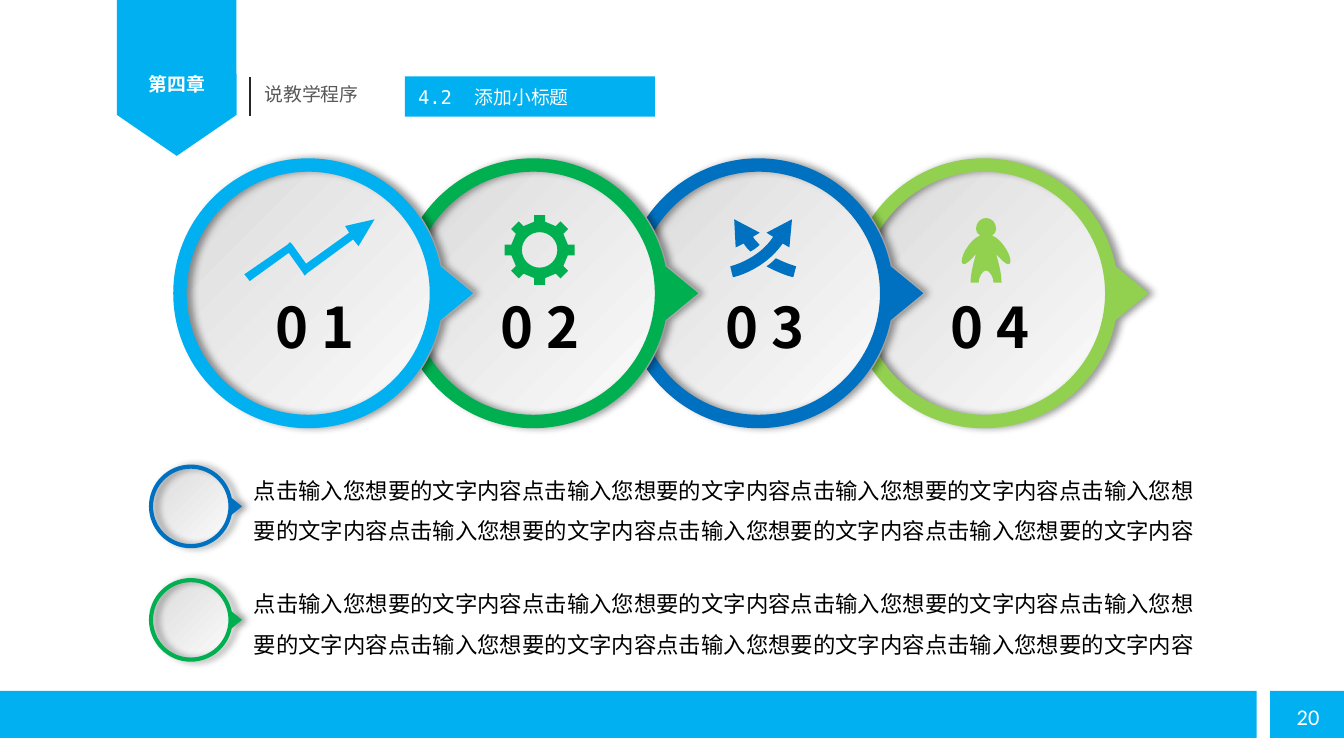
from dataclasses import dataclass
from itertools import pairwise
from math import cos, radians, sin, tan

from lxml import etree
from pptx import Presentation
from pptx import util as u
from pptx.dml.color import RGBColor
from pptx.enum import shapes, text
from pptx.oxml import ns

Step = tuple[float, ...]
Contour = list[Step]

COLORS = {
    "sky": "00B0F0", "green": "00B050", "blue": "0070C0", "lime": "92D050",
    "white": "FFFFFF", "black": "000000", "gray": "595959", "rule": "262626",
    "silver": "D9D9DA",
}
SANS, LATIN, MONO = "Noto Sans CJK SC", "Calibri", "DejaVu Sans Mono"
SENTENCE = "点击输入您想要的文字内容"
RADIUS, HOLE, TIP, BASE_ANGLE = 72.3, 65.1, 88.4, 11.5


@dataclass
class Bubble:
    x: float
    y: float
    color: str
    scale: float = 1
    number: str = ""
    icon: tuple[Contour, ...] = ()


@dataclass
class Band:
    left: float
    top: float
    width: float
    height: float
    kind: shapes.MSO_SHAPE = shapes.MSO_SHAPE.RECTANGLE
    rotation: float = 0


def rgb(color: str) -> RGBColor:
    return RGBColor.from_string(COLORS[color])


def pairs(step: Step) -> list[Step]:
    return list(zip(step[::2], step[1::2]))


def shift(contour: Contour, x: float, y: float) -> Contour:
    return [sum(((px + x, py + y) for px, py in pairs(step)), ()) for step in contour]


def arc(radius: float, start: float = 0, end: float = 360) -> Contour:
    stops = [radians(a) for a in (start, 90, 180, 270, end)]
    contour: Contour = [(radius * cos(stops[0]), radius * sin(stops[0]))]
    for a, b in pairwise(stops):
        pull = 4 / 3 * tan((b - a) / 4)
        contour.append((radius * (cos(a) - pull * sin(a)), radius * (sin(a) + pull * cos(a)),
                        radius * (cos(b) + pull * sin(b)), radius * (sin(b) - pull * cos(b)),
                        radius * cos(b), radius * sin(b)))
    return contour


def mirrored_back(contour: Contour) -> Contour:
    back: Contour = []
    for before, step in reversed(list(pairwise(contour))):
        stops = pairs(step)[-2::-1] + [before[-2:]]
        back.append(sum(((-px, py) for px, py in stops), ()))
    return back


def gear(x: float, y: float) -> tuple[Contour, ...]:
    tooth = [(15.1, -2.9), (18.7, -2.9), (18.7, 2.9), (15.1, 2.9)]
    turns = [radians(45 * i) for i in range(8)]
    rim = [(px * cos(a) - py * sin(a), px * sin(a) + py * cos(a))
           for a in turns for px, py in tooth]
    return shift(rim, x, y), shift(arc(9.5), x, y)


def person(x: float, y: float) -> tuple[Contour, ...]:
    half = [(0, 0), (3, 0, 5.4, 2.5, 5.4, 5.8), (5.4, 7.2, 4.7, 8.6, 3.2, 9.4),
            (9, 11.5, 14.8, 22.3, 12.6, 24.5), (11.2, 25.9, 8.3, 22.3, 5.4, 19.4),
            (6.8, 24.5, 8.3, 29.5, 8.3, 34.6), (4, 34.6), (4, 31.7, 1.8, 28.1, 0, 28.1)]
    return (shift(half + mirrored_back(half), x, y),)


TREND = ([(35.6, -39.6), (19.8, -36), (22, -32.4), (-1.1, -15.8), (-8.3, -25.9),
          (-9.7, -27.4), (-11.2, -25.9), (-34.2, -10.1), (-31.3, -6.5), (-10.4, -21.6),
          (-3.2, -11.5), (-1.8, -9.4), (-0.4, -10.8), (24.1, -28.8), (27, -25.2)],)
CROSSING = (
    [(-7.9, -26.6), (-7.2, -25.2, -5.8, -23.8, -4.3, -22.3),
     (-2.9, -23, -0.7, -24.5, 0.7, -25.9), (-0.7, -27.4, -2.2, -28.8, -2.9, -30.2),
     (0.7, -32.4), (-13, -39.6), (-12.2, -24.5)],
    [(13, -26.6), (16.6, -24.5), (18, -39.6), (4.3, -32.4), (7.9, -30.2),
     (0, -18, -15.1, -14.4, -15.1, -14.4), (-13.7, -8.6), (-13, -8.6, 2.9, -12.2, 13, -26.6)],
    [(9.4, -18.7), (7.9, -17.3, 6.5, -15.8, 4.3, -14.4), (12.2, -10.1, 18, -8.6, 18.7, -8.6),
     (20.2, -14.4), (20.2, -14.4, 15.1, -15.8, 9.4, -18.7)],
)


def bend(outline, contours: tuple[Contour, ...]) -> None:
    route = outline._element.find(".//" + ns.qn("a:path"))
    segments = iter(route.findall(ns.qn("a:lnTo")))
    for contour in contours:
        for step in contour[1:]:
            curve, *rest = [next(segments) for _ in pairs(step)]
            if rest:
                curve.tag = ns.qn("a:cubicBezTo")
            for segment in rest:
                curve.append(segment[0])
                route.remove(segment)


def draw_outline(slide, bubble: Bubble, contours: tuple[Contour, ...]):
    placed = [[(u.Pt(bubble.x + px * bubble.scale), u.Pt(bubble.y + py * bubble.scale))
               for step in contour for px, py in pairs(step)] for contour in contours]
    builder = slide.shapes.build_freeform(*placed[0][0], scale=1)
    for i, points in enumerate(placed):
        if i:
            builder.move_to(*points[0])
        builder.add_line_segments(points[1:], close=False)
    outline = builder.convert_to_shape()
    bend(outline, contours)
    outline.shadow.inherit = False
    outline.fill.solid()
    outline.fill.fore_color.rgb = rgb(bubble.color)
    outline.line.fill.background()
    return outline


def cast_shadow(ring) -> None:
    effects = ring._element.spPr.find(ns.qn("a:effectLst"))
    shade = etree.SubElement(effects, ns.qn("a:outerShdw"), blurRad=str(u.Pt(4)),
                             dist=str(u.Pt(3)), dir="0", algn="ctr", rotWithShape="0")
    tint = etree.SubElement(shade, ns.qn("a:srgbClr"), val=COLORS["black"])
    etree.SubElement(tint, ns.qn("a:alpha"), val="40000")


def write(frame, *runs: tuple[str, str], size: float, color: str, bold: bool = False,
          wrap: bool = True, spacing: float | None = None, align=None,
          inset: float | None = None, grow: bool = True) -> None:
    frame.word_wrap = wrap
    if grow:
        frame.auto_size = text.MSO_AUTO_SIZE.SHAPE_TO_FIT_TEXT
    if inset is not None:
        frame.margin_left = frame.margin_right = u.Pt(inset)
        frame.margin_top = frame.margin_bottom = u.Pt(inset)
    paragraph = frame.paragraphs[0]
    paragraph.alignment, paragraph.line_spacing = align, spacing
    for words, font in runs:
        run = paragraph.add_run()
        run.text = words
        run.font.name, run.font.size, run.font.bold = font, u.Pt(size), bold
        run.font.color.rgb = rgb(color)


def add_frame(slide, left: float, top: float, width: float, height: float):
    return slide.shapes.add_textbox(*map(u.Pt, (left, top, width, height))).text_frame


def draw_band(slide, band: Band):
    box = slide.shapes.add_shape(
        band.kind, *map(u.Pt, (band.left, band.top, band.width, band.height)))
    box.rotation = band.rotation
    box.shadow.inherit = False
    box.fill.solid()
    box.fill.fore_color.rgb = rgb("sky")
    box.line.fill.background()
    return box


def draw_bubble(slide, bubble: Bubble) -> None:
    edge = arc(RADIUS, BASE_ANGLE, 360 - BASE_ANGLE) + [(TIP, 0)]
    edge.append(edge[0])
    disc = draw_outline(slide, bubble, (edge,))
    disc.fill.gradient()
    disc.fill.gradient_angle = 315
    for stop, color in zip(disc.fill.gradient_stops, ("silver", "white")):
        stop.color.rgb = rgb(color)
    disc.line.color.rgb = rgb("white")
    disc.line.width = u.Pt(1.5)
    cast_shadow(draw_outline(slide, bubble, (edge, arc(HOLE))))
    if bubble.icon:
        draw_outline(slide, bubble, bubble.icon)
    if bubble.number:
        write(add_frame(slide, bubble.x - 24.6, 153.4, 61.2, 43.9), (bubble.number, SANS),
              size=30, color="black", bold=True, wrap=False)


def main() -> None:
    deck = Presentation()
    deck.slide_width, deck.slide_height = u.Pt(720), u.Pt(405)
    slide = deck.slides.add_slide(deck.slide_layouts[6])

    for band in (Band(72.7, 29.5, 43.9, 64.1, shapes.MSO_SHAPE.PENTAGON, 90),
                 Band(62.6, 0, 64.1, 39.6), Band(0, 370.1, 673.2, 25.2),
                 Band(680.4, 370.1, 39.6, 25.2)):
        draw_band(slide, band)
    divider = slide.shapes.add_connector(
        shapes.MSO_CONNECTOR.STRAIGHT, *map(u.Pt, (133.9, 41, 133.9, 61.9)))
    divider.line.color.rgb = rgb("rule")
    divider.line.width = u.Pt(0.75)
    etree.SubElement(divider._element.spPr, ns.qn("a:effectLst"))

    write(add_frame(slide, 687.6, 373, 28.8, 21.6), ("20", LATIN),
          size=12, color="white", wrap=False)
    write(add_frame(slide, 62.6, 33.1, 64.1, 18.7), ("第四章", LATIN), size=10.1, color="white",
          bold=True, spacing=1.5, align=text.PP_ALIGN.CENTER, inset=0)
    write(add_frame(slide, 134.6, 41, 144.7, 19.4), ("说教学程序", SANS), size=10.1, color="gray")
    subtitle = draw_band(slide, Band(216.9, 41, 133.9, 21.6)).text_frame
    subtitle.vertical_anchor = text.MSO_ANCHOR.MIDDLE
    write(subtitle, ("4.2  ", MONO), ("添加小标题", LATIN), size=10.1, color="white",
          align=text.PP_ALIGN.LEFT, grow=False)

    steps = (("sky", TREND), ("green", gear(3.4, -23.2)),
             ("blue", CROSSING), ("lime", person(1.4, -40.3)))
    bubbles = [Bubble(165.1 + 120.6 * i, 157.1, color, number=f"0 {i + 1}", icon=icon)
               for i, (color, icon) in enumerate(steps)]
    for bubble in reversed(bubbles):
        draw_bubble(slide, bubble)

    for i, color in enumerate(("blue", "green")):
        drop = 60.8 * i
        write(add_frame(slide, 128.9, 244.8 + drop, 524.2, 94.3), (SENTENCE * 7, SANS),
              size=12, color="black", spacing=1.5)
        draw_bubble(slide, Bubble(102.2, 271.3 + drop, color, scale=0.31))

    deck.save("out.pptx")


if __name__ == "__main__":
    main()
